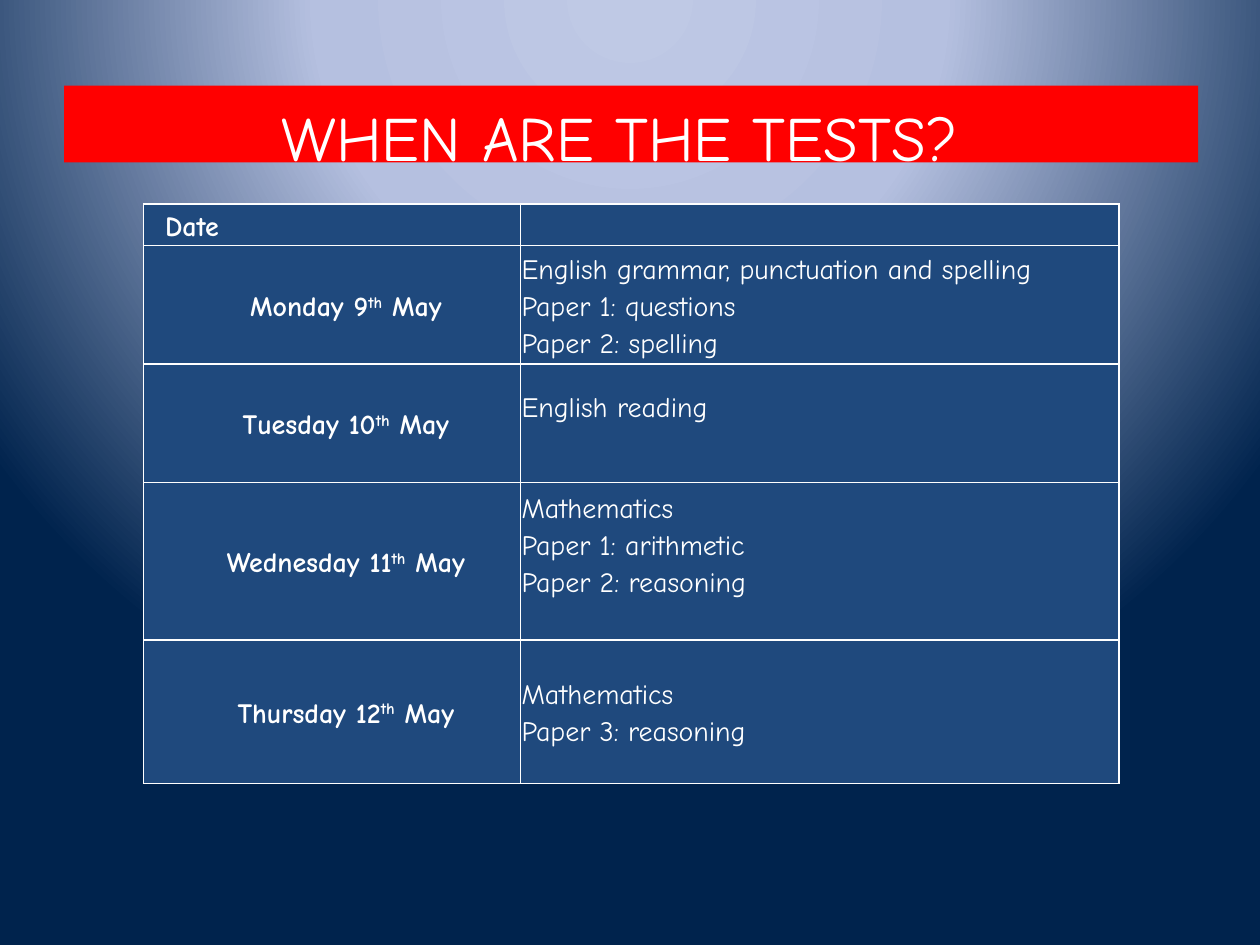
from lxml import etree
from pptx import Presentation, oxml, util as u
from pptx.dml.color import RGBColor
from pptx.enum import shapes, text
from pptx.oxml import ns

FONT = "Comic Neue"
WHITE, RED, BLUE = "FFFFFF", "FF0000", "1F497D"
COLUMNS = (2.99, 4.75)
ROWS = (0.33, 0.94, 0.94, 1.25, 1.14)
TESTS = (
    ("Monday 9", ("English grammar, punctuation and spelling",
                  "Paper 1: questions", "Paper 2: spelling"), 0.01),
    ("Tuesday 10", ("English reading",), 0.28),
    ("Wednesday 11", ("Mathematics", "Paper 1: arithmetic",
                      "Paper 2: reasoning"), 0.28),
    ("Thursday 12", ("Mathematics", "Paper 3: reasoning"), 0.01),
)


def paint(fill, color):
    """Give a fill or a font colour one solid hex colour."""
    fill.solid()
    fill.fore_color.rgb = RGBColor.from_string(color)


def add_text(paragraph, words, size=16, color=WHITE, bold=False, baseline=0):
    """Add one formatted run to a paragraph."""
    run = paragraph.add_run()
    run.text = words
    run.font.name, run.font.size, run.font.bold = FONT, u.Pt(size), bold
    paint(run.font.fill, color)
    if baseline:
        run._r.get_or_add_rPr().set("baseline", str(baseline * 1000))


def set_background(slide):
    """Fill the slide with a circular gradient centred above its top edge."""
    stops = ((0, "BFC9E5"), (40, "B5C0E0"), (100, "00234D"))
    slide.background.fill.gradient()
    gradient = slide.background._cSld.find(".//" + ns.qn("a:gradFill"))
    for child in list(gradient):
        gradient.remove(child)
    stop_list = etree.SubElement(gradient, ns.qn("a:gsLst"))
    for position, color in stops:
        stop = etree.SubElement(stop_list, ns.qn("a:gs"), pos=str(position * 1000))
        etree.SubElement(stop, ns.qn("a:srgbClr"), val=color)
    path = etree.SubElement(gradient, ns.qn("a:path"), path="circle")
    etree.SubElement(path, ns.qn("a:fillToRect"),
                     l="50000", t="-80000", r="50000", b="180000")


def add_title(slide, left, top, width, height):
    """Draw the red title bar."""
    bar = slide.shapes.add_shape(
        shapes.MSO_SHAPE.RECTANGLE,
        *(u.Inches(length) for length in (left, top, width, height)))
    bar.shadow.inherit = False
    paint(bar.fill, RED)
    bar.line.fill.background()
    frame = bar.text_frame
    frame.word_wrap = True
    frame.vertical_anchor = text.MSO_ANCHOR.TOP
    frame.margin_top, frame.margin_bottom = u.Inches(0.1), 0
    frame.margin_right = u.Inches(0.28)
    paragraph = frame.paragraphs[0]
    paragraph.alignment = text.PP_ALIGN.CENTER
    add_text(paragraph, "WHEN ARE THE TESTS?", size=36)


def add_borders(cell):
    """Put a thin white line on each side of a cell."""
    properties = cell._tc.get_or_add_tcPr()
    for index, side in enumerate(("lnL", "lnR", "lnT", "lnB")):
        properties.insert(index, oxml.parse_xml(
            f'<a:{side} {ns.nsdecls("a")} w="12700"><a:solidFill>'
            f'<a:srgbClr val="{WHITE}"/></a:solidFill></a:{side}>'))


def format_cell(cell):
    """Set the fill, borders, margins and anchor of a cell."""
    paint(cell.fill, BLUE)
    add_borders(cell)
    cell.vertical_anchor = text.MSO_ANCHOR.MIDDLE
    cell.margin_left = cell.margin_right = u.Inches(0.01)
    cell.margin_top = cell.margin_bottom = u.Inches(0.01)
    cell.text_frame.paragraphs[0].font.size = u.Pt(16)


def fill_date(cell, day):
    """Write a date with a raised ordinal ending."""
    cell.margin_left = u.Inches(0.23)
    paragraph = cell.text_frame.paragraphs[0]
    paragraph.alignment = text.PP_ALIGN.CENTER
    paragraph.line_spacing = 1.15
    for words, baseline in ((day, 0), ("th", 30), (" May", 0)):
        add_text(paragraph, words, bold=True, baseline=baseline)


def fill_papers(cell, papers, bottom):
    """Write one paragraph for each line of a test's description."""
    cell.margin_bottom = u.Inches(bottom)
    frame = cell.text_frame
    for index, words in enumerate(papers):
        paragraph = frame.add_paragraph() if index else frame.paragraphs[0]
        paragraph.line_spacing = 1.15
        add_text(paragraph, words)


def add_timetable(slide, left, top, width, height):
    """Draw the table of test dates and papers."""
    table = slide.shapes.add_table(
        len(ROWS), len(COLUMNS),
        *(u.Inches(length) for length in (left, top, width, height))).table
    for column, share in zip(table.columns, COLUMNS):
        column.width = u.Inches(width * share / sum(COLUMNS))
    for row, share in zip(table.rows, ROWS):
        row.height = u.Inches(height * share / sum(ROWS))
    for cell in table.iter_cells():
        format_cell(cell)
    header = table.cell(0, 0)
    header.margin_left = u.Inches(0.17)
    paragraph = header.text_frame.paragraphs[0]
    paragraph.line_spacing = 1.15
    add_text(paragraph, "Date", bold=True)
    for index, (day, papers, bottom) in enumerate(TESTS, start=1):
        fill_date(table.cell(index, 0), day)
        fill_papers(table.cell(index, 1), papers, bottom)


def main():
    """Build and save the slide."""
    presentation = Presentation()
    presentation.slide_width = u.Inches(10)
    presentation.slide_height = u.Inches(7.5)
    slide = presentation.slides.add_slide(presentation.slide_layouts[6])
    set_background(slide)
    add_title(slide, 0.51, 0.68, 9, 0.61)
    add_timetable(slide, 1.14, 1.62, sum(COLUMNS), sum(ROWS))
    presentation.save("out.pptx")


if __name__ == "__main__":
    main()
